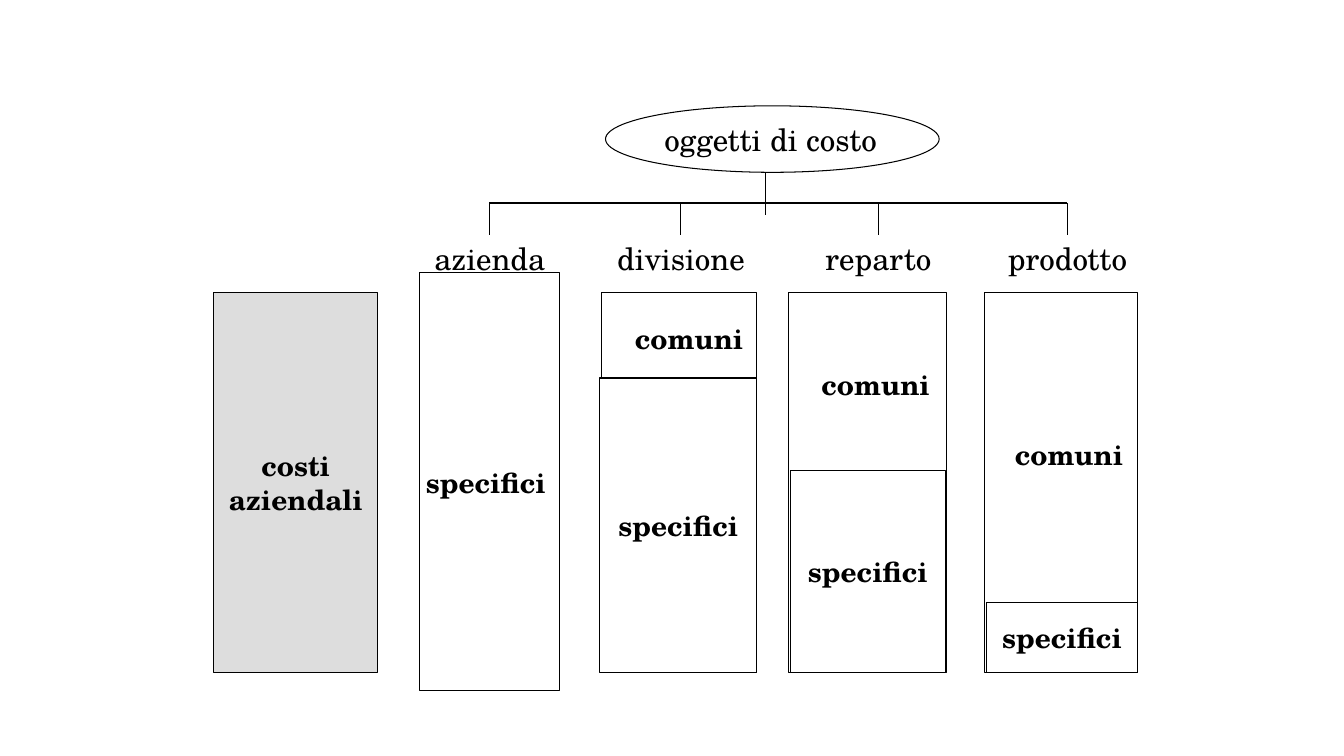
from pptx import Presentation
from pptx.dml.color import RGBColor
from pptx.enum.shapes import MSO_CONNECTOR, MSO_SHAPE
from pptx.enum.text import MSO_ANCHOR, PP_ALIGN
from pptx.util import Pt
from pptx.oxml import parse_xml

RECT, OVAL = MSO_SHAPE.RECTANGLE, MSO_SHAPE.OVAL
STRAIGHT = MSO_CONNECTOR.STRAIGHT
TOP, MIDDLE = MSO_ANCHOR.TOP, MSO_ANCHOR.MIDDLE
LEFT, CENTER = PP_ALIGN.LEFT, PP_ALIGN.CENTER
FONT = "TeX Gyre Schola"
BLACK, WHITE, GREY = "000000", "FFFFFF", "DDDDDD"
HEADING_SIZE, COST_SIZE = 22.1, 20

ROOT = "oggetti di costo"
TOTAL = "costi aziendali"
SPECIFIC, COMMON = "specifici", "comuni"

# heading, (left, width) of the heading, x of its branch
HEADINGS = [
    ("azienda", (295.2, 109.4), 349.5),
    ("divisione", (432.7, 107.3), 486),
    ("reparto", (577.4, 100.1), 627.4),
    ("prodotto", (712.8, 99.4), 762.3),
]
# (left, width) of the whole bar, (left, width, top) of the specific part,
# (left, top) of the common label
SPLIT_BARS = [
    ((429.5, 111), (428.4, 112.3, 270), (446.4, 226.1)),
    ((563.4, 112.4), (564.5, 111, 336.3), (579.6, 259.2)),
    ((703.5, 108.8), (704.9, 107.4, 430.6), (717.8, 308.9)),
]
BAR_TOP, BAR_BOTTOM = 208.9, 480.3
BAR_HEIGHT = BAR_BOTTOM - BAR_TOP
BRANCH_Y, BRANCH_END = 145, 167.6
STEM_X, STEM_TOP, STEM_END = 546.5, 120.2, 153.4

prs = Presentation()
prs.slide_width, prs.slide_height = Pt(960), Pt(540)
slide = prs.slides.add_slide(prs.slide_layouts[6])
shapes = slide.shapes


def color(hex_value):
    return RGBColor.from_string(hex_value)


def write(shape, text, size, bold, align, anchor):
    frame = shape.text_frame
    frame.word_wrap = True
    frame.vertical_anchor = anchor
    frame.text = text
    paragraph = frame.paragraphs[0]
    paragraph.alignment = align
    font = paragraph.runs[0].font
    font.name, font.size, font.bold = FONT, Pt(size), bold
    font.color.rgb = color(BLACK)


def add_outline(kind, left, top, width, height, fill=WHITE):
    shape = shapes.add_shape(kind, Pt(left), Pt(top), Pt(width), Pt(height))
    shape.shadow.inherit = False
    shape.fill.solid()
    shape.fill.fore_color.rgb = color(fill)
    shape.line.color.rgb = color(BLACK)
    shape.line.width = Pt(0.75)
    return shape


def add_cost(text, left, top, width, height, fill=WHITE):
    box = add_outline(RECT, left, top, width, height, fill)
    write(box, text, COST_SIZE, True, CENTER, MIDDLE)


def add_label(text, left, top, width, height, size, bold=False, align=CENTER, anchor=TOP):
    label = shapes.add_textbox(Pt(left), Pt(top), Pt(width), Pt(height))
    write(label, text, size, bold, align, anchor)


def add_line(x1, y1, x2, y2):
    line = shapes.add_connector(STRAIGHT, Pt(x1), Pt(y1), Pt(x2), Pt(y2))
    line.line.color.rgb = color(BLACK)
    line.line.width = Pt(0.75)
    line._element.spPr.append(parse_xml(
        '<a:effectLst xmlns:a="http://schemas.openxmlformats.org/drawingml/2006/main"/>'))


add_cost(TOTAL, 152.6, BAR_TOP, 117.4, BAR_HEIGHT, GREY)

# The company bar is taller than the others; its label is set apart from it
add_outline(RECT, 299.5, 195, 100, 298.6)
add_label(SPECIFIC, 292.3, BAR_TOP, 109.4, BAR_HEIGHT, COST_SIZE, True, CENTER, MIDDLE)

for (left, width), (part_left, part_width, part_top), (label_left, label_top) in SPLIT_BARS:
    add_outline(RECT, left, BAR_TOP, width, BAR_HEIGHT)
    add_cost(SPECIFIC, part_left, part_top, part_width, BAR_BOTTOM - part_top)
    add_label(COMMON, label_left, label_top, 92.9, 31.7, COST_SIZE, True, LEFT)

for heading, (left, width), branch_x in HEADINGS:
    add_label(heading, left, 167.8, width, 33.8, HEADING_SIZE)
    add_line(branch_x, BRANCH_Y, branch_x, BRANCH_END)

add_line(HEADINGS[0][2], BRANCH_Y, HEADINGS[-1][2], BRANCH_Y)
add_line(STEM_X, STEM_TOP, STEM_X, STEM_END)
root = add_outline(OVAL, 432.5, 75.6, 238.3, 47.5)
write(root, ROOT, HEADING_SIZE, False, LEFT, TOP)

prs.save("out.pptx")
